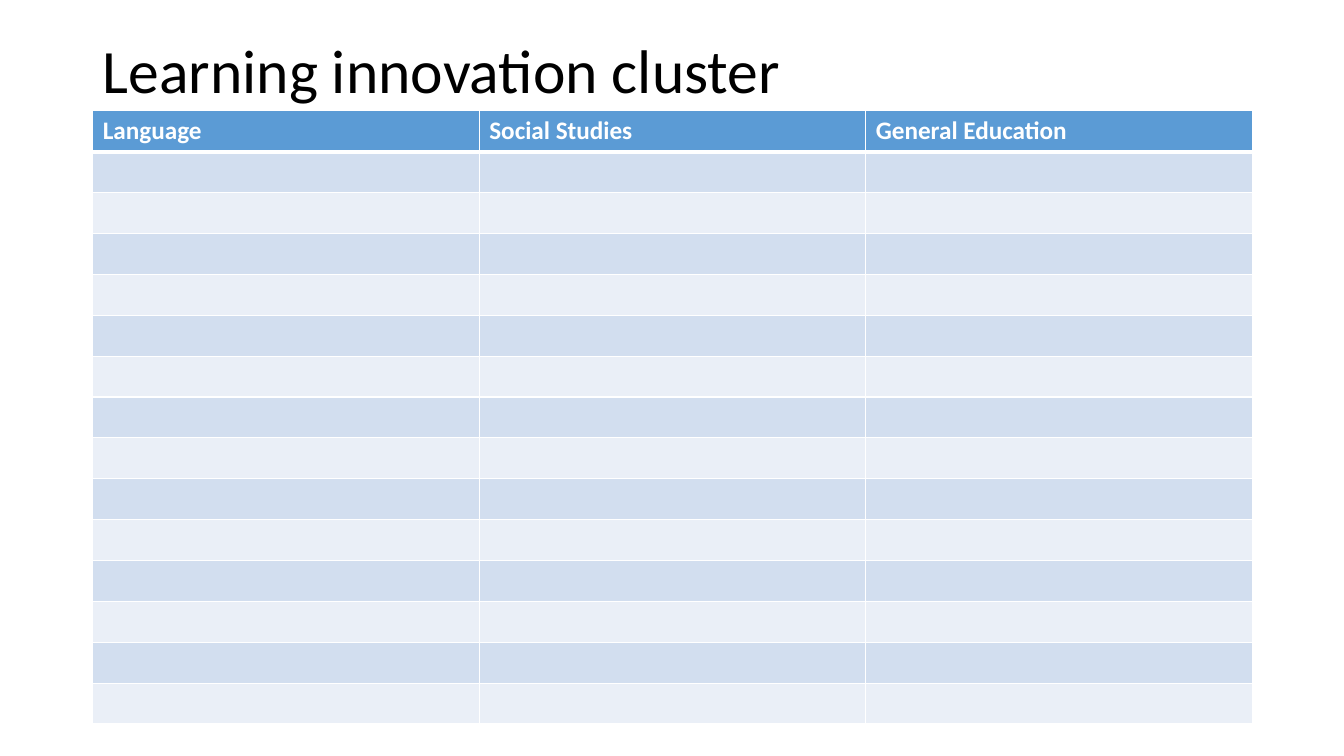
from dataclasses import dataclass

from lxml import etree
from pptx import Presentation
from pptx import util as u
from pptx.dml.color import RGBColor
from pptx.enum import text
from pptx.oxml import ns


@dataclass(frozen=True)
class Theme:
    font: str = "Calibri"
    title_size: int = 44
    header_size: int = 18
    title: str = "000000"
    header_text: str = "FFFFFF"
    header_fill: str = "5B9BD5"
    bands: tuple = ("D2DEEF", "EAEFF7")
    border: str = "FFFFFF"
    thin: float = 1
    thick: float = 3


THEME = Theme()
SUBJECTS = ("Language", "Social Studies", "General Education")
EMPTY_ROWS = 14
LEFT, WIDTH = 0.92, 11.5
TABLE_TOP, TABLE_HEIGHT = 1.1, 6.08


def add_run(p, words, size, color, bold=False):
    r = p.add_run()
    r.text = words
    r.font.name = THEME.font
    r.font.size = u.Pt(size)
    r.font.bold = bold
    r.font.color.rgb = RGBColor.from_string(color)


def set_title(s, words):
    sp = s.shapes.title
    sp.left, sp.top = u.Inches(LEFT), u.Inches(0)
    sp.width, sp.height = u.Inches(WIDTH), u.Inches(1.45)
    tf = sp.text_frame
    tf.word_wrap = True
    tf.vertical_anchor = text.MSO_ANCHOR.MIDDLE
    p = tf.paragraphs[0]
    p.alignment = text.PP_ALIGN.LEFT
    p.line_spacing = 0.9
    add_run(p, words, THEME.title_size, THEME.title)


def set_borders(cell, top, bottom):
    """Border lines come before the fill in the cell properties."""
    tc_pr = cell._tc.get_or_add_tcPr()
    sides = {"lnL": THEME.thin, "lnR": THEME.thin, "lnT": top, "lnB": bottom}
    for i, (side, points) in enumerate(sides.items()):
        ln = etree.Element(ns.qn(f"a:{side}"), w=str(u.Pt(points)))
        fill = etree.SubElement(ln, ns.qn("a:solidFill"))
        etree.SubElement(fill, ns.qn("a:srgbClr"), val=THEME.border)
        tc_pr.insert(i, ln)


def style_cell(cell, row):
    color = THEME.bands[(row - 1) % 2] if row else THEME.header_fill
    cell.fill.solid()
    cell.fill.fore_color.rgb = RGBColor.from_string(color)
    set_borders(cell,
                top=THEME.thick if row == 1 else THEME.thin,
                bottom=THEME.thick if row == 0 else THEME.thin)


def add_subject_table(s):
    frame = s.shapes.add_table(
        EMPTY_ROWS + 1, len(SUBJECTS), u.Inches(LEFT), u.Inches(TABLE_TOP),
        u.Inches(WIDTH), u.Inches(TABLE_HEIGHT))
    table = frame.table
    for row in range(EMPTY_ROWS + 1):
        for col in range(len(SUBJECTS)):
            style_cell(table.cell(row, col), row)
    for col, subject in enumerate(SUBJECTS):
        p = table.cell(0, col).text_frame.paragraphs[0]
        add_run(p, subject, THEME.header_size, THEME.header_text, bold=True)


def main():
    prs = Presentation()
    prs.slide_width, prs.slide_height = u.Inches(13.33), u.Inches(7.5)

    # Title Only layout
    s = prs.slides.add_slide(prs.slide_layouts[5])
    set_title(s, "Learning innovation cluster")

    # Subject headings over banded rows
    add_subject_table(s)

    prs.save("out.pptx")


if __name__ == "__main__":
    main()
